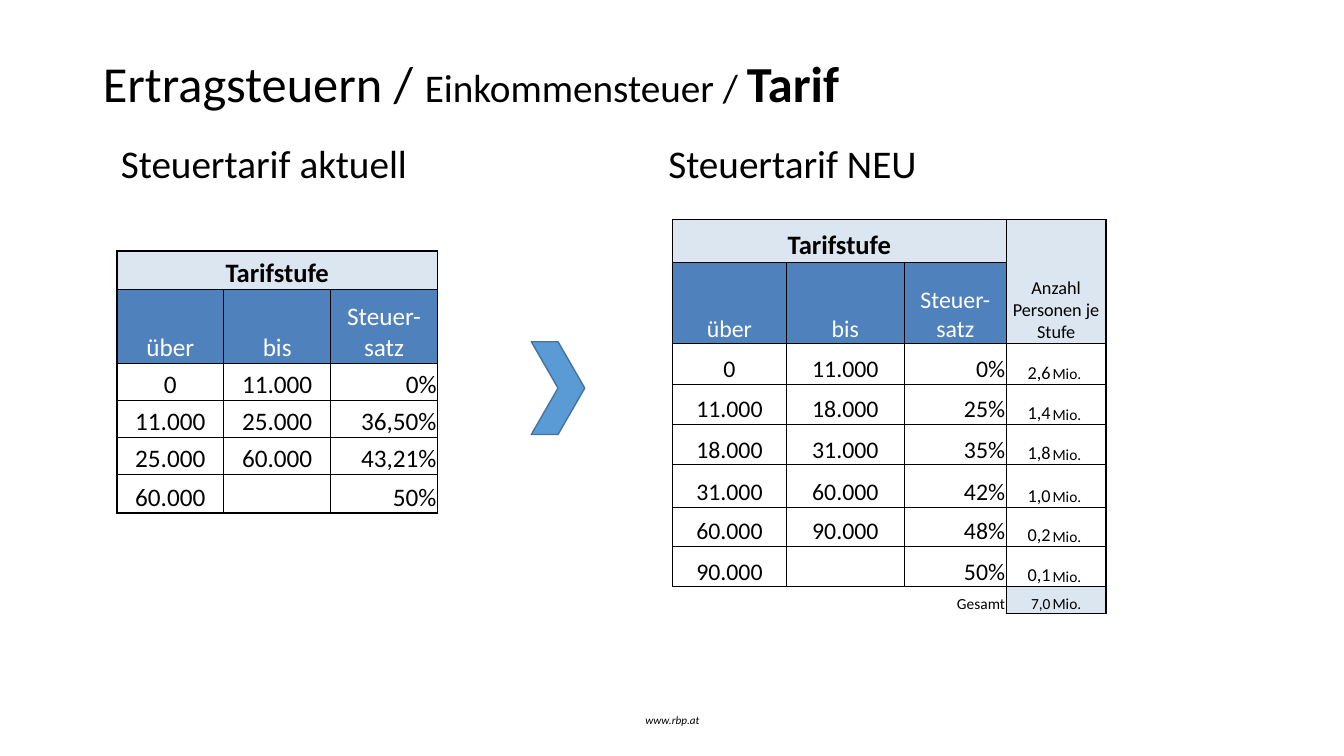
from dataclasses import dataclass

from lxml import etree
from pptx import Presentation
from pptx.dml.color import RGBColor
from pptx.enum.shapes import MSO_SHAPE
from pptx.enum.text import MSO_ANCHOR, PP_ALIGN
from pptx.oxml.ns import qn
from pptx.util import Inches, Pt

LEFT, MID, RIGHT = PP_ALIGN.LEFT, PP_ALIGN.CENTER, PP_ALIGN.RIGHT
TOP, CENTRE, BASE = MSO_ANCHOR.TOP, MSO_ANCHOR.MIDDLE, MSO_ANCHOR.BOTTOM
CHEVRON = MSO_SHAPE.CHEVRON
FONT, BLACK, WHITE = "Calibri", "000000", "FFFFFF"
PALE, BLUE = "DCE6F1", "4F81BD"
Box = tuple[int, int, int, int]  # first row, first column, last row, last column


@dataclass
class Label:
    text: str
    at: tuple[float, float, float, float]
    size: int
    align: int = LEFT
    anchor: int = TOP
    italic: bool = False


@dataclass
class Tariff:
    at: tuple[float, float]
    cols: list[float]
    highs: list[float]
    sizes: list[int]  # one per column
    rows: list[list[str]]
    spans: list[Box]
    total: bool = False  # last row sums up the people, outside the tariff


LABELS = [
    Label("Steuertarif aktuell", (1.1, 1.39, 4, 0.55), 28),
    Label("Steuertarif NEU", (6.53, 1.39, 4, 0.55), 28),
    Label("www.rbp.at", (4.42, 6.95, 4.5, 0.4), 8, MID, CENTRE, True),
]

HEAD = ["über", "bis", "Steuer-satz"]
TARIFFS = [
    Tariff((1.16, 2.49), [1.06] * 3, [0.38, 0.73, 0.37, 0.37, 0.37, 0.38],
           [18, 18, 18],
           [["Tarifstufe"], HEAD,
            ["0", "11.000", "0%"],
            ["11.000", "25.000", "36,50%"],
            ["25.000", "60.000", "43,21%"],
            ["60.000", "", "50%"]],
           [(0, 0, 0, 2)]),
    Tariff((6.67, 2.18), [1.13, 1.17, 1.01, 0.45, 0.54],
           [0.42, 0.81, 0.4, 0.4, 0.4, 0.42, 0.39, 0.4, 0.27],
           [17, 17, 17, 13, 11],
           [["Tarifstufe", "", "", "Anzahl Personen je Stufe"], HEAD,
            ["0", "11.000", "0%", "2,6", "Mio."],
            ["11.000", "18.000", "25%", "1,4", "Mio."],
            ["18.000", "31.000", "35%", "1,8", "Mio."],
            ["31.000", "60.000", "42%", "1,0", "Mio."],
            ["60.000", "90.000", "48%", "0,2", "Mio."],
            ["90.000", "", "50%", "0,1", "Mio."],
            ["", "", "Gesamt", "7,0", "Mio."]],
           [(0, 0, 0, 2), (0, 3, 1, 4)], True),
]


def rgb(code: str) -> RGBColor:
    return RGBColor.from_string(code)


def style(font, size: int, code: str = BLACK, bold: bool = False) -> None:
    font.name, font.size, font.bold = FONT, Pt(size), bold
    font.color.rgb = rgb(code)


def add_label(slide, label: Label) -> None:
    frame = slide.shapes.add_textbox(*map(Inches, label.at)).text_frame
    frame.word_wrap = True
    frame.vertical_anchor = label.anchor
    para = frame.paragraphs[0]
    para.text, para.alignment = label.text, label.align
    para.line_spacing = 0.9
    style(para.font, label.size)
    para.font.italic = label.italic


def edges(tab: Tariff, row: int, col: int) -> dict[str, float]:
    """Border widths: 1 around the outside, 0.5 inside, 0 within a pair."""
    def zone(r: int, c: int):
        last = len(tab.highs) - 1
        if not (0 <= r <= last and 0 <= c < len(tab.cols)):
            return None
        if tab.total and r == last and c < 3:
            return None
        return r, min(c, 3)  # amount and unit form a pair

    r1, c1, r2, c2 = next(
        (s for s in tab.spans if s[0] <= row <= s[2] and s[1] <= col <= s[3]),
        (row, col, row, col))
    here = zone(row, col)
    near = {"lnL": zone(row, c1 - 1), "lnR": zone(row, c2 + 1),
            "lnT": zone(r1 - 1, col), "lnB": zone(r2 + 1, col)}
    return {side: 0 if far == here else 1 if None in (far, here) else 0.5
            for side, far in near.items()}


def add_edges(cell, sides: dict[str, float]) -> None:
    props = cell._tc.get_or_add_tcPr()
    for side, width in sides.items():
        line = etree.SubElement(props, qn(f"a:{side}"), w=str(Pt(width)))
        if width:
            fill = etree.SubElement(line, qn("a:solidFill"))
            etree.SubElement(fill, qn("a:srgbClr"), val=BLACK)
        else:
            etree.SubElement(line, qn("a:noFill"))


def fill_cell(cell, tab: Tariff, row: int, col: int) -> None:
    words = tab.rows[row]
    sums = tab.total and row == len(tab.rows) - 1
    head = row == 1 and col < 3
    title = row == 0 and col < 3
    add_edges(cell, edges(tab, row, col))
    if head:
        cell.fill.solid()
        cell.fill.fore_color.rgb = rgb(BLUE)
    elif row < 2 or sums and col > 2:
        cell.fill.solid()
        cell.fill.fore_color.rgb = rgb(PALE)
    else:
        cell.fill.background()
    cell.margin_left = cell.margin_right = cell.margin_top = Inches(0.01)
    cell.margin_bottom = 0
    cell.vertical_anchor = BASE
    para = cell.text_frame.paragraphs[0]
    if col < len(words) and words[col]:
        para.text = words[col]
    para.alignment = MID if row < 2 else [MID, MID, RIGHT, RIGHT, LEFT][col]
    size = 19 if title else 11 if sums else tab.sizes[col]
    style(para.font, size, WHITE if head else BLACK, title)


def add_tariff(slide, tab: Tariff) -> None:
    spot = (*tab.at, sum(tab.cols), sum(tab.highs))
    table = slide.shapes.add_table(
        len(tab.highs), len(tab.cols), *map(Inches, spot)).table
    table.first_row = table.horz_banding = False
    for col, width in zip(table.columns, tab.cols):
        col.width = Inches(width)
    for r, high in enumerate(tab.highs):
        table.rows[r].height = Inches(high)
        for c in range(len(tab.cols)):
            fill_cell(table.cell(r, c), tab, r, c)
    for r1, c1, r2, c2 in tab.spans:
        table.cell(r1, c1).merge(table.cell(r2, c2))


def add_title(slide) -> None:
    title = slide.shapes.title
    title.left, title.top = Inches(0.92), Inches(0.4)
    title.width, title.height = Inches(11.25), Inches(0.91)
    title.text_frame.vertical_anchor = CENTRE
    para = title.text_frame.paragraphs[0]
    para.alignment, para.line_spacing = LEFT, 0.9
    for text, size, bold in [("Ertragsteuern / ", 36, False),
                             ("Einkommensteuer / ", 28, False),
                             ("Tarif", 36, True)]:
        run = para.add_run()
        run.text = text
        style(run.font, size, bold=bold)


def add_arrow(slide) -> None:
    arrow = slide.shapes.add_shape(
        CHEVRON, *map(Inches, (5.27, 3.39, 0.53, 0.92)))
    arrow.shadow.inherit = False
    arrow.fill.solid()
    arrow.fill.fore_color.rgb = rgb("5B9BD5")
    arrow.line.color.rgb = rgb("43739E")
    arrow.line.width = Pt(1)


def main() -> None:
    deck = Presentation()
    deck.slide_width, deck.slide_height = Inches(13.33), Inches(7.5)
    slide = deck.slides.add_slide(deck.slide_layouts[5])
    add_title(slide)
    for label in LABELS:
        add_label(slide, label)
    for tab in TARIFFS:
        add_tariff(slide, tab)
    add_arrow(slide)
    deck.save("out.pptx")


if __name__ == "__main__":
    main()
